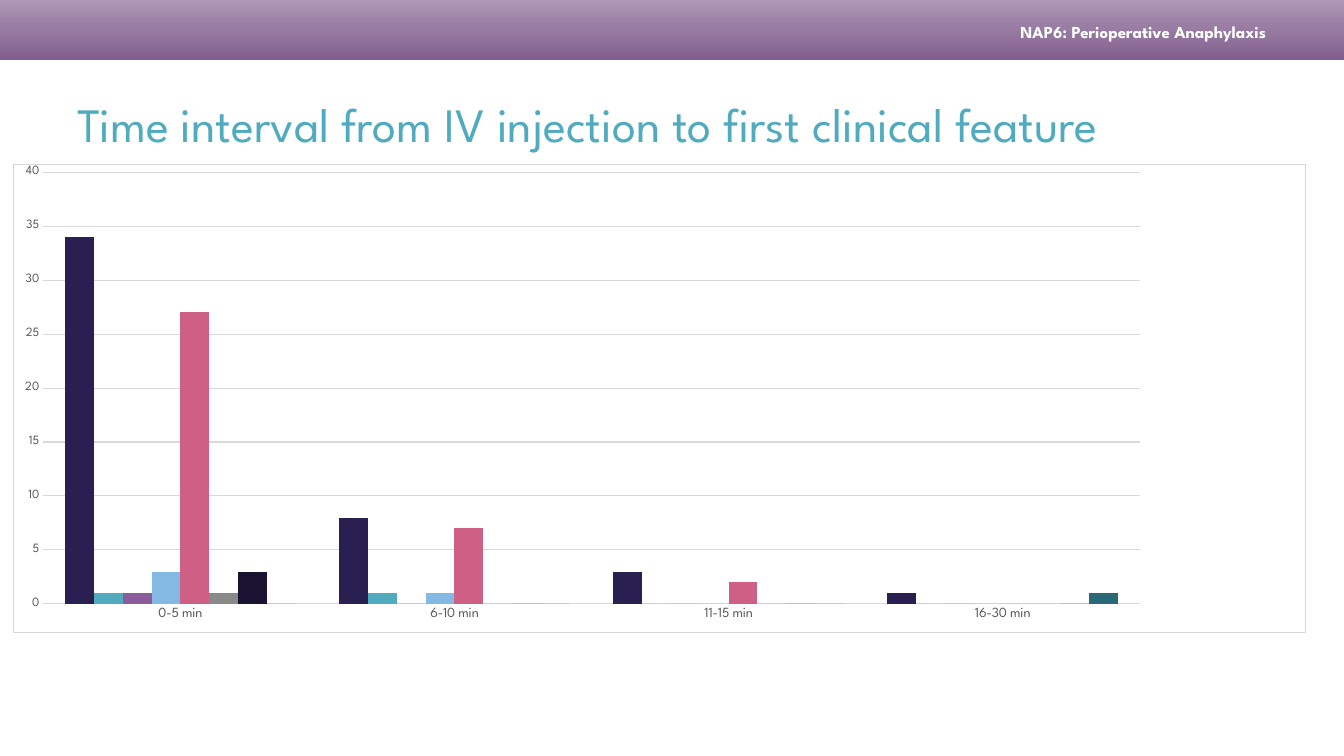
from copy import deepcopy

from lxml import etree
from pptx import Presentation
from pptx.chart.data import CategoryChartData
from pptx.dml.color import RGBColor
from pptx.enum.chart import XL_CHART_TYPE as ChartType, XL_TICK_MARK as TickMark
from pptx.enum.shapes import MSO_SHAPE as Preset
from pptx.enum.text import MSO_ANCHOR as Anchor, PP_ALIGN as Align
from pptx.oxml import parse_xml
from pptx.oxml.ns import nsdecls, qn
from pptx.util import Inches, Pt

FONT = "League Spartan"
COLORS = {
    "white": "FFFFFF", "title": "50ABBF", "axis": "595959", "grid": "D9D9D9",
    "band_dark": "815D8D", "band_mid": "997DA3", "band_light": "AD98B6",
    "navy": "291F51", "teal": "50ABBF", "purple": "8A5D9A", "sky": "83B9E2",
    "pink": "CD6084", "grey": "888A88", "ink": "191331", "pine": "2C6977",
}
INTERVALS = ["0-5 min", "6-10 min", "11-15 min", "16-30 min"]
SERIES = [
    ("navy", (34, 8, 3, 1)),
    ("teal", (1, 1, 0, 0)),
    ("purple", (1, 0, 0, 0)),
    ("sky", (3, 1, 0, 0)),
    ("pink", (27, 7, 2, 0)),
    ("grey", (1, 0, 0, 0)),
    ("ink", (3, 0, 0, 0)),
    ("pine", (0, 0, 0, 1)),
]


def rgb(name):
    return RGBColor.from_string(COLORS[name])


class SlideBuilder:
    def __init__(self, slide):
        self.slide = slide

    def style_font(self, font, size, color, bold=False):
        font.name, font.size, font.bold = FONT, Pt(size), bold
        font.color.rgb = rgb(color)

    def band(self, left, top, width, height, stops):
        """Draw a rectangle whose (percent, color) stops run from bottom to top."""
        band = self.slide.shapes.add_shape(
            Preset.RECTANGLE, Inches(left), Inches(top), Inches(width), Inches(height))
        band.shadow.inherit = False
        band.line.fill.background()
        band.fill.gradient()
        band.fill.gradient_angle = 90
        stop_list = band._element.spPr.find(".//" + qn("a:gsLst"))
        stop_list.insert(1, deepcopy(stop_list[0]))
        for stop, (percent, color) in zip(band.fill.gradient_stops, stops):
            stop.position = percent / 100
            stop.color.rgb = rgb(color)

    def running_head(self, text, left, top, width, height):
        box = self.slide.shapes.add_textbox(
            Inches(left), Inches(top), Inches(width), Inches(height))
        frame = box.text_frame
        frame.word_wrap = True
        frame.vertical_anchor = Anchor.MIDDLE
        frame.margin_right = Inches(0.24)
        frame.text = text
        frame.paragraphs[0].alignment = Align.RIGHT
        self.style_font(frame.paragraphs[0].runs[0].font, 12, "white", bold=True)

    def title(self, text, left, top, width, height):
        title = self.slide.shapes.title
        title.left, title.top = Inches(left), Inches(top)
        title.width, title.height = Inches(width), Inches(height)
        frame = title.text_frame
        frame.text = text
        frame.word_wrap = True
        frame.vertical_anchor = Anchor.MIDDLE
        frame.paragraphs[0].alignment = Align.LEFT
        self.style_font(frame.paragraphs[0].runs[0].font, 34.2, "title")

    def column_chart(self, categories, series, left, top, width, height, plot):
        """Add clustered columns; plot is the inner x, y, w, h as chart fractions."""
        data = CategoryChartData()
        data.categories = categories
        for number, (_, values) in enumerate(series, 1):
            data.add_series(f"Series {number}", values)
        chart = self.slide.shapes.add_chart(
            ChartType.COLUMN_CLUSTERED, Inches(left), Inches(top),
            Inches(width), Inches(height), data).chart
        chart.has_title = chart.has_legend = False
        chart.font.name, chart.font.size = FONT, Pt(10)

        columns = chart.plots[0]
        columns.vary_by_categories = False
        columns.gap_width, columns.overlap = 150, 0
        for column, (color, _) in zip(columns.series, series):
            column.format.fill.solid()
            column.format.fill.fore_color.rgb = rgb(color)

        for axis, size in ((chart.category_axis, 10), (chart.value_axis, 9)):
            axis.major_tick_mark = axis.minor_tick_mark = TickMark.NONE
            axis.format.line.fill.background()
            self.style_font(axis.tick_labels.font, size, "axis")
        counts = chart.value_axis
        counts.minimum_scale, counts.maximum_scale, counts.major_unit = 0, 40, 5
        counts.has_major_gridlines = True
        counts.major_gridlines.format.line.color.rgb = rgb("grid")
        counts.major_gridlines.format.line.width = Pt(0.75)
        self.place_plot(chart, plot)
        self.frame_chart(chart)

    def place_plot(self, chart, plot):
        plot_area = chart._chartSpace.chart.plotArea
        for old in plot_area.findall(qn("c:layout")):
            plot_area.remove(old)
        layout = parse_xml(f"<c:layout {nsdecls('c')}><c:manualLayout/></c:layout>")
        settings = [("layoutTarget", "inner"), ("xMode", "edge"), ("yMode", "edge"),
                    *zip("xywh", plot)]
        for tag, value in settings:
            etree.SubElement(layout[0], qn(f"c:{tag}")).set("val", str(value))
        plot_area.insert(0, layout)

    def frame_chart(self, chart):
        chart._chartSpace.chart.addnext(parse_xml(
            f"<c:spPr {nsdecls('c', 'a')}>"
            f'<a:solidFill><a:srgbClr val="{COLORS["white"]}"/></a:solidFill>'
            f'<a:ln w="{Pt(0.75)}"><a:solidFill><a:srgbClr val="{COLORS["grid"]}"/>'
            "</a:solidFill></a:ln></c:spPr>"))


def main():
    deck = Presentation()
    deck.slide_width, deck.slide_height = Inches(13.33), Inches(7.5)
    builder = SlideBuilder(deck.slides.add_slide(deck.slide_layouts[5]))
    builder.band(0, 0, 13.33, 0.6,
                 [(0, "band_dark"), (55, "band_mid"), (100, "band_light")])
    builder.running_head("NAP6: Perioperative Anaphylaxis", 8.35, 0.18, 4.45, 0.28)
    builder.title("Time interval from IV injection to first clinical feature",
                  0.67, 0.6, 12, 1.25)
    builder.column_chart(INTERVALS, SERIES, 0.13, 1.63, 12.82, 4.65,
                         plot=(0.023, 0.016, 0.849, 0.923))
    deck.save("out.pptx")


if __name__ == "__main__":
    main()
